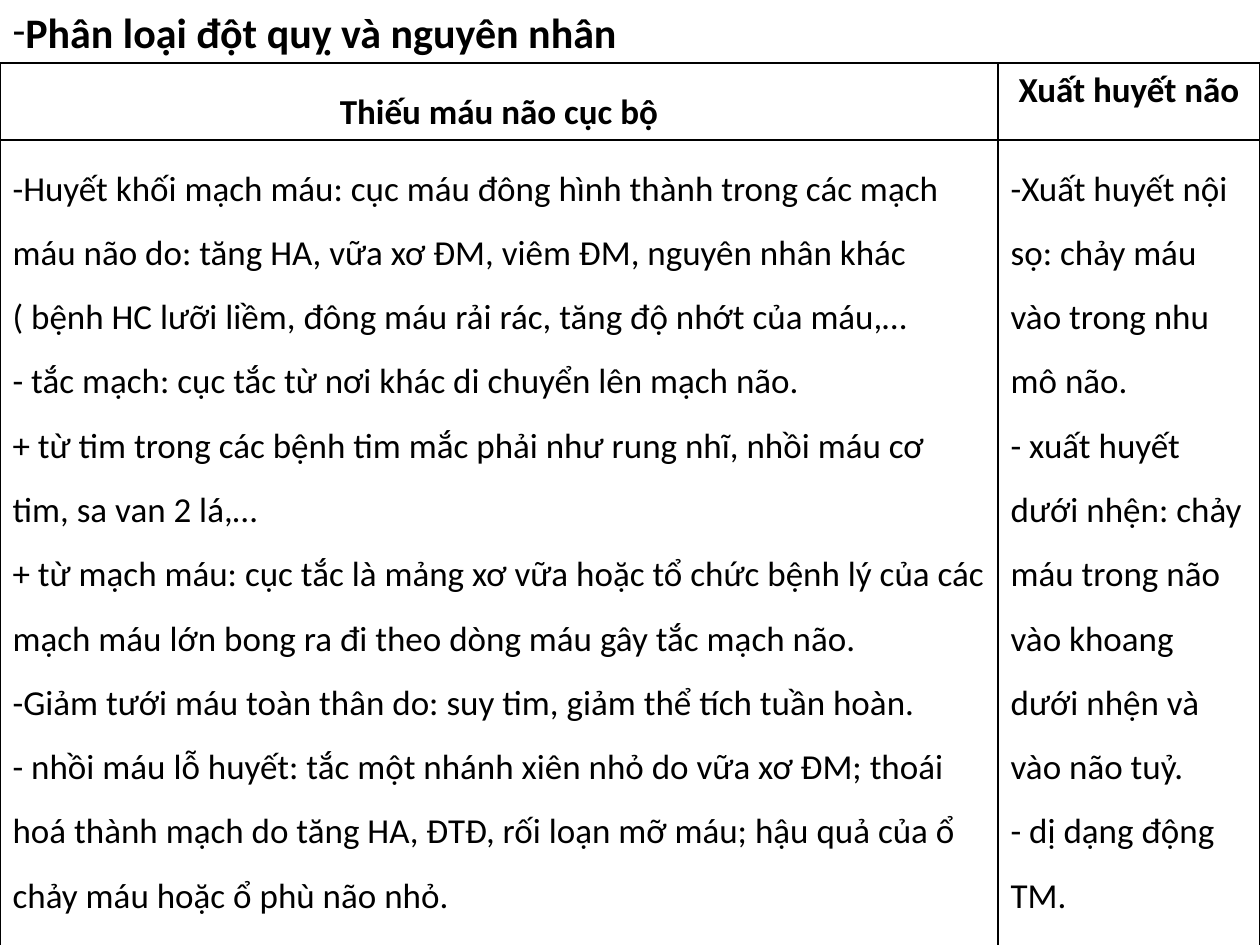
from dataclasses import dataclass

from lxml import etree
from pptx import Presentation
from pptx import util as u
from pptx.dml.color import RGBColor
from pptx.enum import text
from pptx.oxml import ns


@dataclass(frozen=True)
class Theme:
    font: str = "Calibri"
    ink: RGBColor = RGBColor(0, 0, 0)
    title_size: int = 24
    table_size: int = 20
    border_width: int = 1
    line_spacing: float = 1.5


THEME = Theme()
TITLE = "Phân loại đột quỵ và nguyên nhân"
HEADERS = [("Thiếu máu não cục bộ", THEME.line_spacing), ("Xuất huyết não", 1.0)]
CAUSES = [
    [
        ("-", "Huyết khối mạch máu: cục máu đông hình thành trong các mạch máu não do: "
              "tăng HA, vữa xơ ĐM, viêm ĐM, nguyên nhân khác ( bệnh HC lưỡi liềm, "
              "đông máu rải rác, tăng độ nhớt của máu,…"),
        ("-", " tắc mạch: cục tắc từ nơi khác di chuyển lên mạch não."),
        ("", "+ từ tim trong các bệnh tim mắc phải như rung nhĩ, nhồi máu cơ tim, "
             "sa van 2 lá,…"),
        ("", "+ từ mạch máu: cục tắc là mảng xơ vữa hoặc tổ chức bệnh lý của các mạch máu "
             "lớn bong ra đi theo dòng máu gây tắc mạch não."),
        ("-", "Giảm tưới máu toàn thân do: suy tim, giảm thể tích tuần hoàn."),
        ("-", " nhồi máu lỗ huyết: tắc một nhánh xiên nhỏ do vữa xơ ĐM; thoái hoá thành mạch "
              "do tăng HA, ĐTĐ, rối loạn mỡ máu; hậu quả của ổ chảy máu hoặc ổ phù não nhỏ."),
    ],
    [
        ("-", "Xuất huyết nội sọ: chảy máu vào trong nhu mô não."),
        ("-", " xuất huyết dưới nhện: chảy máu trong não vào khoang dưới nhện và vào não tuỷ."),
        ("-", " dị dạng động TM."),
    ],
]


def add_run(paragraph, words, size, bold=False):
    run = paragraph.add_run()
    run.text = words
    run.font.name = THEME.font
    run.font.size = u.Pt(size)
    run.font.bold = bold
    run.font.color.rgb = THEME.ink


def set_bullet(paragraph, mark):
    properties = paragraph._p.get_or_add_pPr()
    properties.set("marL", "0")
    properties.set("indent", "0")
    etree.SubElement(properties, ns.qn("a:buFont"), typeface=THEME.font)
    etree.SubElement(properties, ns.qn("a:buChar"), char=mark)


def set_borders(cell):
    properties = cell._tc.get_or_add_tcPr()
    for index, side in enumerate(("lnL", "lnR", "lnT", "lnB")):
        line = etree.Element(ns.qn(f"a:{side}"), w=str(u.Pt(THEME.border_width)))
        fill = etree.SubElement(line, ns.qn("a:solidFill"))
        etree.SubElement(fill, ns.qn("a:srgbClr"), val=str(THEME.ink))
        properties.insert(index, line)


def add_title(slide, width):
    title = slide.shapes.title
    title.left, title.top, title.width, title.height = 0, 0, width, u.Cm(2.06)
    frame = title.text_frame
    frame.word_wrap = True
    frame.auto_size = text.MSO_AUTO_SIZE.NONE
    frame.vertical_anchor = text.MSO_ANCHOR.TOP
    paragraph = frame.paragraphs[0]
    paragraph.alignment = text.PP_ALIGN.LEFT
    set_bullet(paragraph, "-")
    add_run(paragraph, TITLE, THEME.title_size, bold=True)


def fill_header(cell, words, spacing):
    paragraph = cell.text_frame.paragraphs[0]
    paragraph.alignment = text.PP_ALIGN.CENTER
    paragraph.line_spacing = spacing
    add_run(paragraph, words, THEME.table_size, bold=True)


def fill_list(cell, items):
    frame = cell.text_frame
    for index, (mark, words) in enumerate(items):
        paragraph = frame.add_paragraph() if index else frame.paragraphs[0]
        paragraph.line_spacing = THEME.line_spacing
        if mark:
            set_bullet(paragraph, mark)
        add_run(paragraph, words, THEME.table_size)


def add_causes_table(slide, width):
    frame = slide.shapes.add_table(2, 2, 0, u.Cm(1.27), width, u.Cm(21.08))
    table = frame.table
    table.first_row = False
    table.horz_banding = False
    table.columns[0].width = u.Cm(20.12)
    table.columns[1].width = width - table.columns[0].width
    table.rows[0].height = u.Cm(0.84)
    table.rows[1].height = u.Cm(19.56)
    for cell in table.iter_cells():
        cell.fill.background()
        set_borders(cell)
    for column, (header, items) in enumerate(zip(HEADERS, CAUSES)):
        fill_header(table.cell(0, column), *header)
        fill_list(table.cell(1, column), items)


def main():
    presentation = Presentation()
    presentation.slide_width = u.Cm(25.4)
    presentation.slide_height = u.Cm(19.05)
    slide = presentation.slides.add_slide(presentation.slide_layouts[5])
    add_title(slide, presentation.slide_width)
    add_causes_table(slide, presentation.slide_width)
    presentation.save("out.pptx")


if __name__ == "__main__":
    main()
